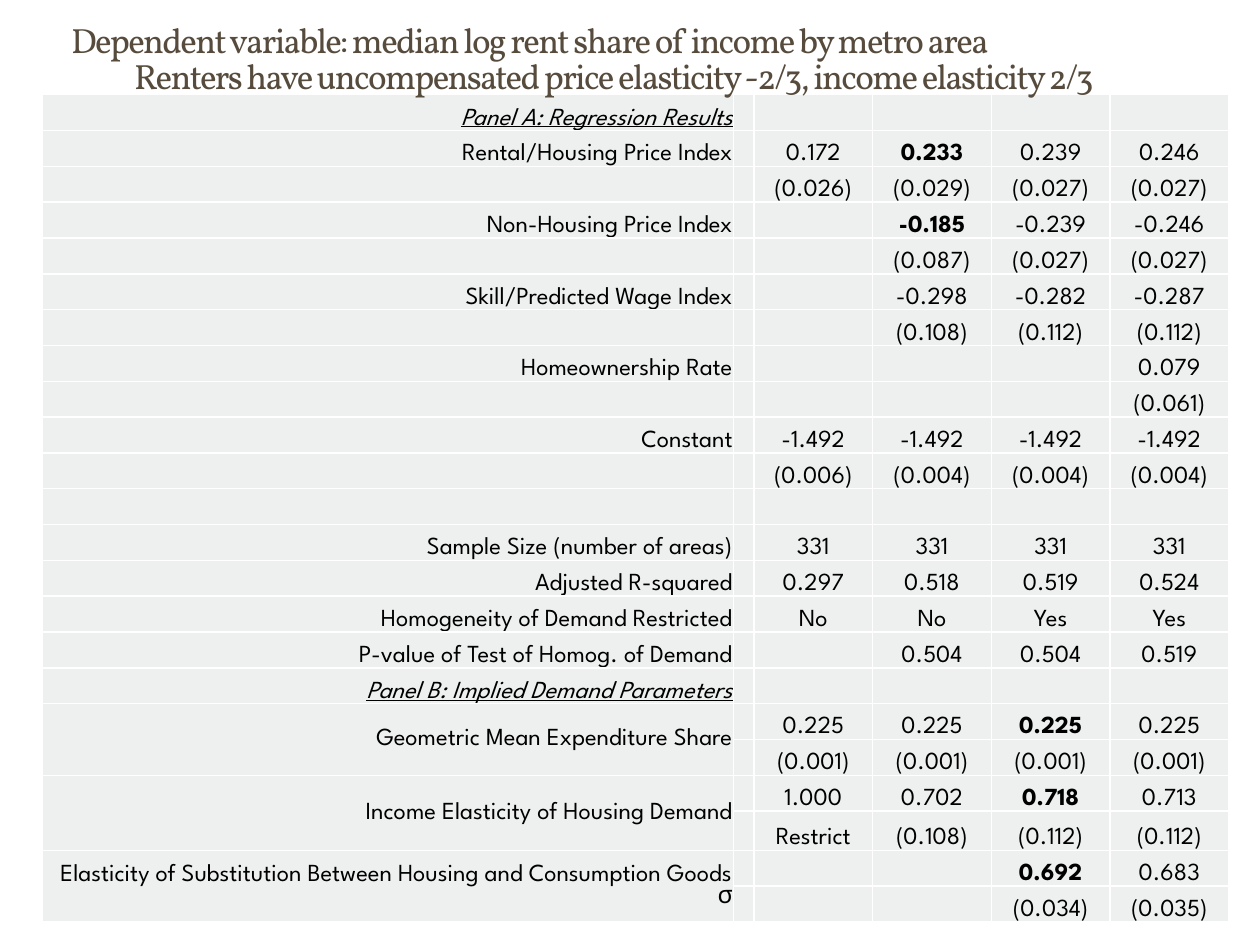
from lxml import etree
from pptx import Presentation
from pptx import util as u
from pptx.dml.color import RGBColor
from pptx.enum import text
from pptx.oxml.ns import qn

TITLE_LINES = [
    "Dependent variable: median log rent share of income by metro area",
    "\tRenters have uncompensated price elasticity -2/3, income elasticity 2/3",
]

PANELS = {"Panel A: Regression Results", "Panel B: Implied Demand Parameters"}
BOLD_ESTIMATES = {(1, 1), (3, 1), (17, 2), (19, 2), (21, 2)}
RESULTS = [
    ("Panel A: Regression Results", "", "", "", ""),
    ("Rental/Housing Price Index", "0.172", "0.233", "0.239", "0.246"),
    ("", "(0.026)", "(0.029)", "(0.027)", "(0.027)"),
    ("Non-Housing Price Index", "", "-0.185", "-0.239", "-0.246"),
    ("", "", "(0.087)", "(0.027)", "(0.027)"),
    ("Skill/Predicted Wage Index", "", "-0.298", "-0.282", "-0.287"),
    ("", "", "(0.108)", "(0.112)", "(0.112)"),
    ("Homeownership Rate", "", "", "", "0.079"),
    ("", "", "", "", "(0.061)"),
    ("Constant", "-1.492", "-1.492", "-1.492", "-1.492"),
    ("", "(0.006)", "(0.004)", "(0.004)", "(0.004)"),
    ("", "", "", "", ""),
    ("Sample Size (number of areas)", "331", "331", "331", "331"),
    ("Adjusted R-squared", "0.297", "0.518", "0.519", "0.524"),
    ("Homogeneity of Demand Restricted", "No", "No", "Yes", "Yes"),
    ("P-value of Test of Homog. of Demand", "", "0.504", "0.504", "0.519"),
    ("Panel B: Implied Demand Parameters", "", "", "", ""),
    ("Geometric Mean Expenditure Share", "0.225", "0.225", "0.225", "0.225"),
    ("", "(0.001)", "(0.001)", "(0.001)", "(0.001)"),
    ("Income Elasticity of Housing Demand", "1.000", "0.702", "0.718", "0.713"),
    ("", "Restrict", "(0.108)", "(0.112)", "(0.112)"),
    ("Elasticity of Substitution Between Housing and Consumption Goods σ",
     "", "", "0.692", "0.683"),
    ("", "", "", "(0.034)", "(0.035)"),
]
TWO_ROW_LABELS = (17, 19, 21)
RESTRICT_ROW = 20


def colour(code):
    return RGBColor.from_string(code)


def add_run(paragraph, words, font_name, size, code):
    run = paragraph.add_run()
    run.text = words
    run.font.name = font_name
    run.font.size = u.Pt(size)
    run.font.color.rgb = colour(code)
    return run


def place_heading(slide, left, top, width, height):
    heading = slide.shapes.title
    heading.left, heading.top, heading.width, heading.height = left, top, width, height
    frame = heading.text_frame
    frame.word_wrap = True
    frame.auto_size = text.MSO_AUTO_SIZE.NONE
    frame.vertical_anchor = text.MSO_ANCHOR.TOP
    frame.margin_top = u.Cm(0.3)
    for number, line in enumerate(TITLE_LINES):
        paragraph = frame.add_paragraph() if number else frame.paragraphs[0]
        paragraph.alignment = text.PP_ALIGN.LEFT
        paragraph.line_spacing = 0.86
        paragraph.space_before = u.Pt(0)
        run = add_run(paragraph, line, "Vollkorn", 20, "564B3C")
        run.font._element.set("spc", "-100")
    slide.shapes._spTree.append(heading._element)


def style_cell(cell):
    cell.margin_left = cell.margin_right = cell.margin_top = u.Cm(0.02)
    cell.margin_bottom = 0
    cell.vertical_anchor = text.MSO_ANCHOR.BOTTOM
    properties = cell._tc.get_or_add_tcPr()
    for side in ("a:lnL", "a:lnR", "a:lnT", "a:lnB"):
        border = etree.SubElement(properties, qn(side), w=str(u.Pt(1)))
        solid = etree.SubElement(border, qn("a:solidFill"))
        etree.SubElement(solid, qn("a:srgbClr"), val="FFFFFF")
    cell.fill.solid()
    cell.fill.fore_color.rgb = colour("EEF0EF")


def write_cell(cell, words, alignment):
    paragraph = cell.text_frame.paragraphs[0]
    paragraph.alignment = alignment
    if not words:
        etree.SubElement(paragraph._p, qn("a:endParaRPr"), sz="1400")
        return None
    return add_run(paragraph, words, "League Spartan", 14, "000000")


def place_results(slide, left, top, width, height):
    results = slide.shapes.add_table(len(RESULTS), 6, left, top, width, height).table
    results.first_row = results.horz_banding = False

    label_width, gap_width = u.Cm(13.94), u.Cm(0.41)
    model_width = (width - label_width - gap_width) // 4
    for column, size in zip(results.columns, [label_width, gap_width] + [model_width] * 4):
        column.width = size

    restrict_height = u.Cm(0.79)
    for number, row in enumerate(results.rows):
        row.height = (restrict_height if number == RESTRICT_ROW
                      else (height - restrict_height) // (len(RESULTS) - 1))

    for number, (label, *estimates) in enumerate(RESULTS):
        cells = list(results.rows[number].cells)
        for cell in cells:
            style_cell(cell)
        label_run = write_cell(cells[0], label, text.PP_ALIGN.RIGHT)
        if label in PANELS:
            label_run.font.italic = label_run.font.underline = True
        write_cell(cells[1], "", text.PP_ALIGN.CENTER)
        for model, estimate in enumerate(estimates):
            estimate_run = write_cell(cells[model + 2], estimate, text.PP_ALIGN.CENTER)
            if (number, model) in BOLD_ESTIMATES:
                estimate_run.font.bold = True

    for number in TWO_ROW_LABELS:
        label_cell = results.cell(number, 0)
        label_cell.merge(results.cell(number + 1, 0))
        label_cell.vertical_anchor = text.MSO_ANCHOR.MIDDLE


def main():
    deck = Presentation()
    deck.slide_width, deck.slide_height = u.Cm(25.4), u.Cm(19.05)
    slide = deck.slides.add_slide(deck.slide_layouts[5])
    place_results(slide, u.Cm(0.85), u.Cm(1.91), u.Cm(23.92), u.Cm(16.69))
    place_heading(slide, u.Cm(1.18), u.Cm(0.2), u.Cm(23.7), u.Cm(3.25))
    deck.save("out.pptx")


if __name__ == "__main__":
    main()
